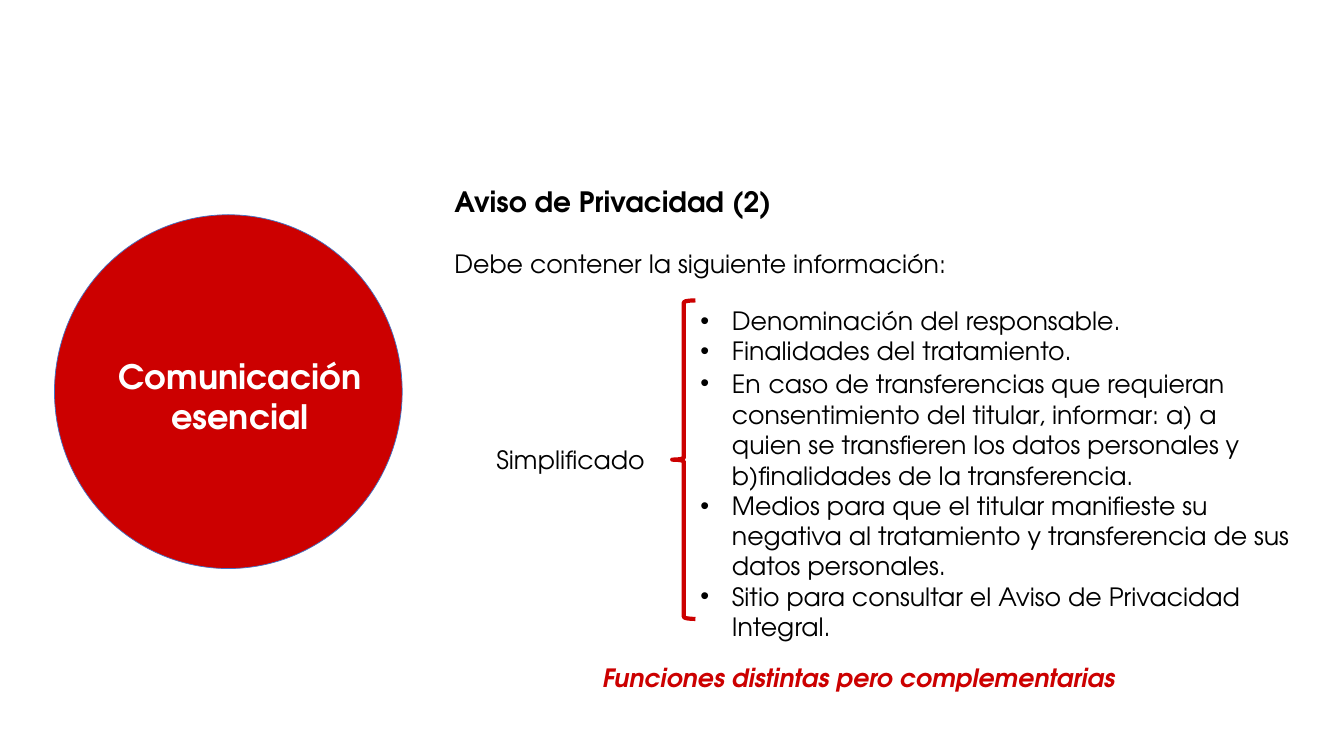
import pptx
import pptx.dml.color
import pptx.enum.shapes
import pptx.enum.text
import pptx.oxml.ns
import pptx.util
from lxml import etree

Pt = pptx.util.Pt
CENTER = pptx.enum.text.PP_ALIGN.CENTER
SHAPES = pptx.enum.shapes.MSO_SHAPE
FONT = "TeX Gyre Adventor"
COLORS = {"red": "CC0000", "blue": "4472C4", "black": "000000", "white": "FFFFFF"}
BULLET_INDENT = 22.5


def color(name):
    return pptx.dml.color.RGBColor.from_string(COLORS[name])


def add_text(paragraphs, left, top, width, height, size=18, ink="black", bold=False,
             italic=False, align=None, bullet=False, gap=0):
    """Add a text box; each paragraph is a list of (text, overrides of size and bold)."""
    box = slide.shapes.add_textbox(Pt(left), Pt(top), Pt(width), Pt(height))
    frame = box.text_frame
    frame.word_wrap = True
    for index, runs in enumerate(paragraphs):
        paragraph = frame.paragraphs[0] if index == 0 else frame.add_paragraph()
        paragraph.alignment = align
        if index:
            paragraph.space_before = Pt(gap)
        for text, overrides in runs:
            run = paragraph.add_run()
            run.text = text
            run.font.name = FONT
            run.font.size = Pt(overrides.get("size", size))
            run.font.bold = overrides.get("bold", bold)
            run.font.italic = italic
            run.font.color.rgb = color(ink)
        if bullet:
            properties = paragraph._p.get_or_add_pPr()
            properties.set("marL", str(Pt(BULLET_INDENT)))
            properties.set("indent", str(-Pt(BULLET_INDENT)))
            for tag, attribute, value in (("a:buFont", "typeface", "Arial"),
                                          ("a:buChar", "char", "•")):
                mark = etree.SubElement(properties, pptx.oxml.ns.qn(tag))
                mark.set(attribute, value)


presentation = pptx.Presentation()
presentation.slide_width = Pt(960)
presentation.slide_height = Pt(540)
slide = presentation.slides.add_slide(presentation.slide_layouts[6])

# Heading and lead-in
add_text([[("Aviso de Privacidad (2)", {"size": 20, "bold": True})],
          [("Debe contener la siguiente información:", {})]],
         317.5, 128.2, 591.8, 74.9, gap=21.6)

# Simplified notice and its contents
add_text([[("Simplificado", {})]], 307.4, 313.9, 200.2, 28.8, align=CENTER)
contents = [
    [("Denominación del responsable.", {})],
    [("Finalidades del tratamiento.", {})],
    [("En", {}), (" ", {"size": 20}),
     ("caso de transferencias que requieran consentimiento del titular, informar: "
      "a) a quien se transfieren los datos personales y b)finalidades de la "
      "transferencia.", {})],
    [("Medios para que el titular manifieste su negativa al tratamiento y "
      "transferencia de sus datos personales.", {})],
    [("Sitio para consultar el Aviso de Privacidad Integral.", {})],
]
add_text(contents, 493.2, 214.6, 436.4, 249.8, bullet=True)
add_text([[("Funciones distintas pero complementarias", {})]],
         317.5, 469.4, 591.8, 28.8, ink="red", bold=True, italic=True, align=CENTER)

brace = slide.shapes.add_shape(SHAPES.LEFT_BRACE, Pt(480.2), Pt(214.6), Pt(16.6), Pt(227.5))
brace.shadow.inherit = False
brace.fill.background()
brace.line.color.rgb = color("red")
brace.line.width = Pt(3)

# Circle with its caption
circle = slide.shapes.add_shape(SHAPES.OVAL, Pt(38.9), Pt(153.4), Pt(248.4), Pt(252.7))
circle.shadow.inherit = False
circle.fill.solid()
circle.fill.fore_color.rgb = color("red")
circle.line.color.rgb = color("blue")
circle.line.width = Pt(0.5)
add_text([[("Comunicación esencial", {})]], 71.3, 250.6, 200.2, 65.5,
         size=24, ink="white", bold=True, align=CENTER)

presentation.save("out.pptx")
